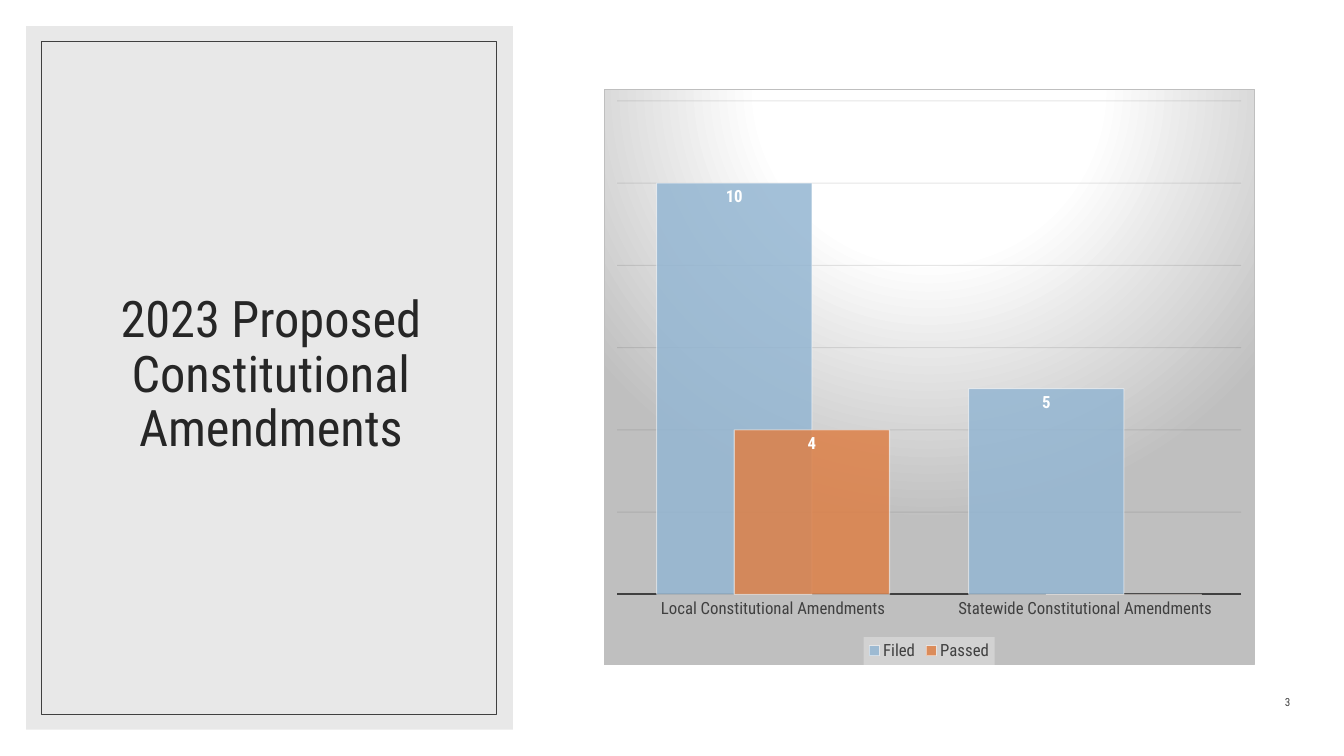
"""Build the slide on proposed constitutional amendments in 2023."""
from lxml import etree
from pptx import Presentation
from pptx.chart.data import CategoryChartData
from pptx.dml.color import RGBColor
from pptx.enum.chart import XL_CHART_TYPE, XL_LABEL_POSITION, XL_LEGEND_POSITION, XL_TICK_MARK
from pptx.enum.shapes import MSO_SHAPE
from pptx.enum.text import MSO_ANCHOR, PP_ALIGN
from pptx.oxml import parse_xml
from pptx.oxml.ns import nsdecls, qn
from pptx.util import Cm, Pt

RECT = MSO_SHAPE.RECTANGLE
COLUMN = XL_CHART_TYPE.COLUMN_CLUSTERED
INSIDE = XL_LABEL_POSITION.INSIDE_END
BOTTOM = XL_LEGEND_POSITION.BOTTOM
NO_TICK = XL_TICK_MARK.NONE
MIDDLE, LOW = MSO_ANCHOR.MIDDLE, MSO_ANCHOR.BOTTOM
CENTER, RIGHT = PP_ALIGN.CENTER, PP_ALIGN.RIGHT

FACE = "Roboto Condensed"
COLORS = {
    "white": "FFFFFF", "panel": "D9D9D9", "title": "262626", "dark": "404040",
    "black": "000000", "grid": "0D0D0D", "gray": "BFBFBF", "key": "F2F2F2",
    "Filed": "94B6D2", "Passed": "DD8047",
}


def style(font, size, color, bold=False):
    """Set the face, size, weight and colour of a font."""
    for name, value in {"name": FACE, "size": Pt(size), "bold": bold}.items():
        setattr(font, name, value)
    font.color.rgb = RGBColor.from_string(COLORS[color])


def fade(node, *shares):
    """Give each colour in a node its opacity in percent."""
    for color, share in zip(node.iter(qn("a:srgbClr")), shares):
        etree.SubElement(color, qn("a:alpha")).set("val", str(share * 1000))


deck = Presentation()
deck.slide_width, deck.slide_height = Cm(33.87), Cm(19.05)
slide = deck.slides.add_slide(deck.slide_layouts[6])

panels = [
    ((0, 0, 33.87, 19.05), "white", 100, None),
    ((0.66, 0.66, 12.27, 17.73), "panel", 60, None),
    ((1.04, 1.04, 11.46, 16.97), None, 100, "dark"),
]
for box, fill, share, edge in panels:
    panel = slide.shapes.add_shape(RECT, *map(Cm, box))
    panel.shadow.inherit = False
    if fill:
        panel.fill.solid()
        panel.fill.fore_color.rgb = RGBColor.from_string(COLORS[fill])
        if share < 100:
            fade(panel.fill._xPr, share)
    else:
        panel.fill.background()
    if edge:
        panel.line.color.rgb = RGBColor.from_string(COLORS[edge])
        panel.line.width = Pt(0.5)
    else:
        panel.line.fill.background()

texts = [
    ("2023 Proposed Constitutional Amendments", (1.6, 1.55, 10.46, 15.85), 36, "title",
     MIDDLE, {"alignment": CENTER, "line_spacing": 0.9}),
    ("3", (30.48, 17.22, 2.29, 0.76), 8, "dark",
     LOW, {"alignment": RIGHT, "space_after": Pt(6)}),
]
for words, box, size, color, anchor, form in texts:
    frame = slide.shapes.add_textbox(*map(Cm, box)).text_frame
    frame.word_wrap = True
    frame.vertical_anchor = anchor
    para = frame.paragraphs[0]
    for name, value in form.items():
        setattr(para, name, value)
    run = para.add_run()
    run.text = words
    style(run.font, size, color)

data = CategoryChartData()
data.categories = ["Local Constitutional Amendments", "Statewide Constitutional Amendments"]
data.add_series("Filed", (10, 5))
data.add_series("Passed", (4, 0))
place = map(Cm, (15.21, 2.24, 16.41, 14.53))
chart = slide.shapes.add_chart(COLUMN, *place, data).chart
chart.has_title = False
style(chart.font, 10, "black")

plot = chart.plots[0]
for name, value in {"gap_width": 51, "overlap": 50, "vary_by_categories": False}.items():
    setattr(plot, name, value)
for bars in plot.series:
    bars.format.fill.solid()
    bars.format.fill.fore_color.rgb = RGBColor.from_string(COLORS[bars.name])
    bars.format.line.color.rgb = RGBColor.from_string(COLORS["white"])
    bars.format.line.width = Pt(0.75)
    fade(bars.format.fill._xPr, 85, 50)
    labels = bars.data_labels
    labels.show_value = True
    labels.position = INSIDE
    style(labels.font, 12, "white", True)
    for index, value in enumerate(bars.values):
        if value == 0:
            labels._element.insert(0, parse_xml(
                f'<c:dLbl {nsdecls("c")}><c:idx val="{index}"/><c:delete val="1"/></c:dLbl>'))

groups = chart.category_axis
groups.major_tick_mark = groups.minor_tick_mark = NO_TICK
groups.format.line.color.rgb = RGBColor.from_string(COLORS["dark"])
groups.format.line.width = Pt(1.5)
style(groups.tick_labels.font, 12, "dark")

scale = chart.value_axis
form = {"visible": False, "minimum_scale": 0, "maximum_scale": 12, "major_unit": 2,
        "has_major_gridlines": True}
for name, value in form.items():
    setattr(scale, name, value)
grid = scale.major_gridlines.format
grid.line.color.rgb = RGBColor.from_string(COLORS["grid"])
grid.line.width = Pt(0.75)
fade(grid.fill._xPr, 10)

chart.has_legend = True
legend = chart.legend
legend.position = BOTTOM
legend.include_in_layout = False
style(legend.font, 12, "dark")
back = parse_xml(
    f'<c:spPr {nsdecls("c", "a")}><a:solidFill><a:srgbClr val="{COLORS["key"]}"/>'
    '</a:solidFill><a:ln><a:noFill/></a:ln></c:spPr>')
fade(back, 39)
legend._element.find(qn("c:txPr")).addprevious(back)

stops = "".join(
    f'<a:gs pos="{spot * 1000}"><a:srgbClr val="{COLORS[color]}"/></a:gs>'
    for spot, color in ((0, "white"), (39, "white"), (100, "gray")))
chart._chartSpace.find(qn("c:txPr")).addprevious(parse_xml(
    f'<c:spPr {nsdecls("c", "a")}><a:gradFill><a:gsLst>{stops}</a:gsLst>'
    '<a:path path="circle"><a:fillToRect l="50000" t="-80000" r="50000" b="180000"/></a:path>'
    f'</a:gradFill><a:ln w="{Pt(0.75)}"><a:solidFill><a:srgbClr val="{COLORS["gray"]}"/>'
    '</a:solidFill></a:ln></c:spPr>'))

deck.save("out.pptx")
